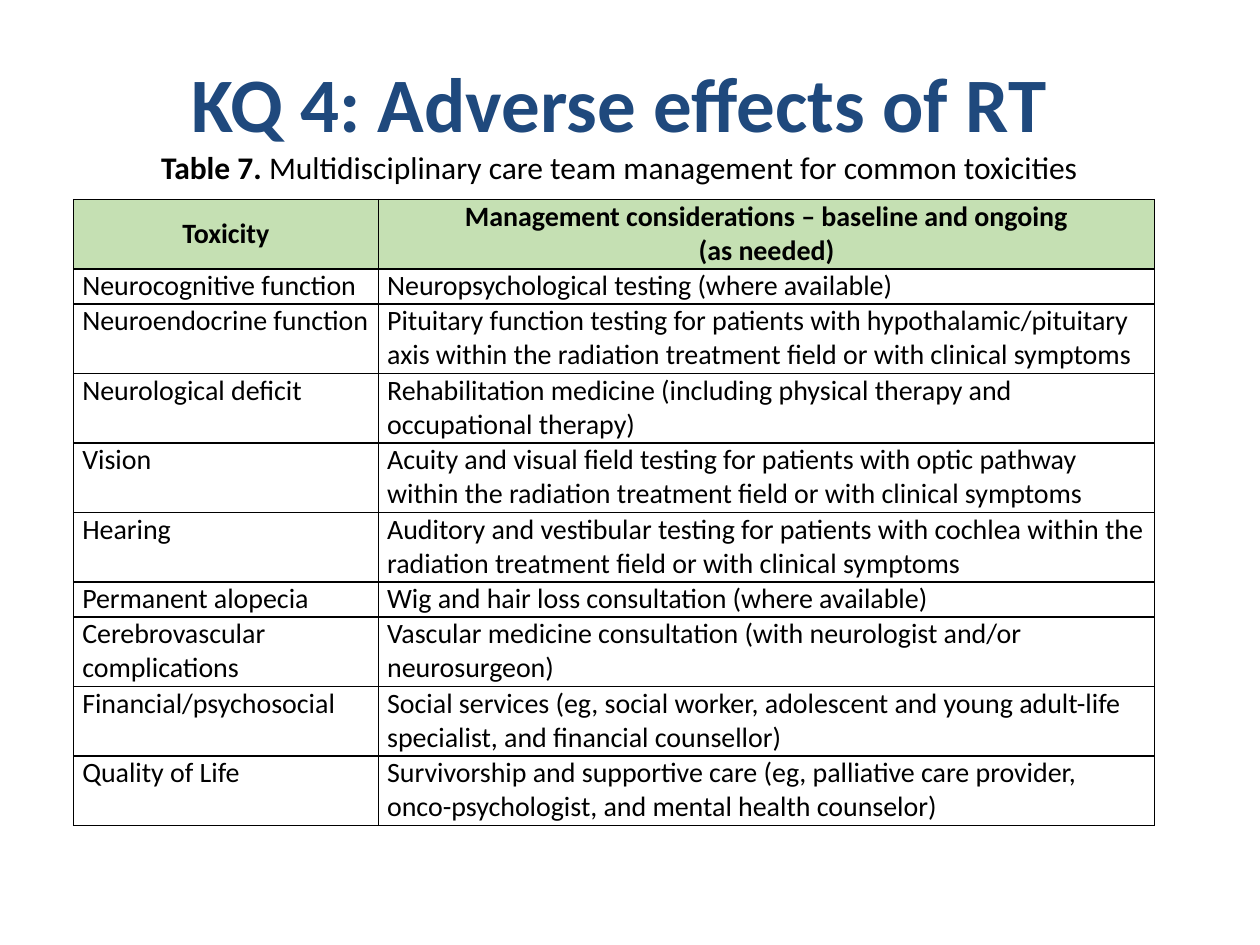
import pptx
import pptx.dml.color
import pptx.enum.text
import pptx.oxml.ns
import pptx.util
from lxml import etree

COLORS = {"heading": "1F497D", "text": "000000", "header": "C5E0B3", "border": "000000"}
ALIGN = pptx.enum.text.PP_ALIGN
ANCHOR = pptx.enum.text.MSO_ANCHOR

HEADER = ("Toxicity", "Management considerations – baseline and ongoing\n(as needed)")
TOXICITIES = [
    ("Neurocognitive function", "Neuropsychological testing (where available)"),
    ("Neuroendocrine function",
     "Pituitary function testing for patients with hypothalamic/pituitary axis "
     "within the radiation treatment field or with clinical symptoms"),
    ("Neurological deficit",
     "Rehabilitation medicine (including physical therapy and occupational therapy)"),
    ("Vision",
     "Acuity and visual field testing for patients with optic pathway "
     "within the radiation treatment field or with clinical symptoms"),
    ("Hearing",
     "Auditory and vestibular testing for patients with cochlea "
     "within the radiation treatment field or with clinical symptoms"),
    ("Permanent alopecia", "Wig and hair loss consultation (where available)"),
    ("Cerebrovascular complications",
     "Vascular medicine consultation (with neurologist and/or neurosurgeon)"),
    ("Financial/psychosocial",
     "Social services (eg, social worker, adolescent and young adult-life specialist, "
     "and financial counsellor)"),
    ("Quality of Life",
     "Survivorship and supportive care (eg, palliative care provider, "
     "onco-psychologist, and mental health counselor)"),
]
ROW_LINES = [2, 1, 2, 2, 2, 2, 1, 2, 2, 2]


def set_all(target, values):
    for name, value in values.items():
        setattr(target, name, value)


class Deck:
    font_name = "Calibri"
    cell_size = 16
    border_width = 1

    def __init__(self, width, height):
        self.presentation = pptx.Presentation()
        self.width = pptx.util.Inches(width)
        self.height = pptx.util.Inches(height)
        set_all(self.presentation, {"slide_width": self.width, "slide_height": self.height})
        self.slide = self.presentation.slides.add_slide(self.presentation.slide_layouts[5])

    def across(self, share):
        return int(self.width * share)

    def down(self, share):
        return int(self.height * share)

    def add_text(self, paragraph, text, size, bold, color="text"):
        run = paragraph.add_run()
        run.text = text
        set_all(run.font, {"name": self.font_name, "size": pptx.util.Pt(size), "bold": bold})
        run.font.color.rgb = pptx.dml.color.RGBColor.from_string(COLORS[color])

    def title(self, heading, label, caption, left, top, width, height):
        title = self.slide.shapes.title
        set_all(title, {"left": self.across(left), "top": self.down(top),
                        "width": self.across(width), "height": self.down(height)})
        set_all(title.text_frame, {"word_wrap": True, "vertical_anchor": ANCHOR.MIDDLE,
                                   "auto_size": pptx.enum.text.MSO_AUTO_SIZE.NONE})
        line = title.text_frame.paragraphs[0]
        line.alignment = ALIGN.CENTER
        self.add_text(line, heading, 44, True, "heading")
        line.add_line_break()
        self.add_text(line, label, 18, True)
        self.add_text(line, caption, 18, False)

    def border(self, cell):
        properties = cell._tc.get_or_add_tcPr()
        tag = pptx.oxml.ns.qn
        for side in ("a:lnL", "a:lnR", "a:lnT", "a:lnB"):
            edge = etree.SubElement(properties, tag(side),
                                    w=str(pptx.util.Pt(self.border_width)))
            fill = etree.SubElement(edge, tag("a:solidFill"))
            etree.SubElement(fill, tag("a:srgbClr"), val=COLORS["border"])

    def cell(self, cell, text, is_header):
        set_all(cell, {"margin_left": pptx.util.Inches(0.07),
                       "margin_right": pptx.util.Inches(0.07),
                       "margin_top": 0, "margin_bottom": 0,
                       "vertical_anchor": ANCHOR.MIDDLE if is_header else ANCHOR.TOP})
        self.border(cell)
        if is_header:
            cell.fill.solid()
            cell.fill.fore_color.rgb = pptx.dml.color.RGBColor.from_string(COLORS["header"])
        else:
            cell.fill.background()
        for index, line in enumerate(text.split("\n")):
            frame = cell.text_frame
            paragraph = frame.add_paragraph() if index else frame.paragraphs[0]
            paragraph.alignment = ALIGN.CENTER if is_header else ALIGN.LEFT
            self.add_text(paragraph, line, self.cell_size, is_header)

    def table(self, rows, row_lines, column_shares, left, top, height):
        table = self.slide.shapes.add_table(
            len(rows), len(column_shares), self.across(left), self.down(top),
            self.across(sum(column_shares)), self.down(height)).table
        set_all(table, {"first_row": False, "horz_banding": False})
        for column, share in zip(table.columns, column_shares):
            column.width = self.across(share)
        line_height = height / sum(row_lines)
        for index, (row, texts, lines) in enumerate(zip(table.rows, rows, row_lines)):
            row.height = self.down(lines * line_height)
            for cell, text in zip(row.cells, texts):
                self.cell(cell, text, index == 0)


def main():
    deck = Deck(10, 7.5)
    deck.title("KQ 4: Adverse effects of RT", "Table 7. ",
               "Multidisciplinary care team management for common toxicities",
               left=1 / 30, top=2 / 45, width=11 / 12, height=1 / 6)
    deck.table([HEADER] + TOXICITIES, ROW_LINES, (0.242, 0.616),
               left=7 / 120, top=19 / 90, height=4.97 / 7.5)
    deck.presentation.save("out.pptx")


if __name__ == "__main__":
    main()
